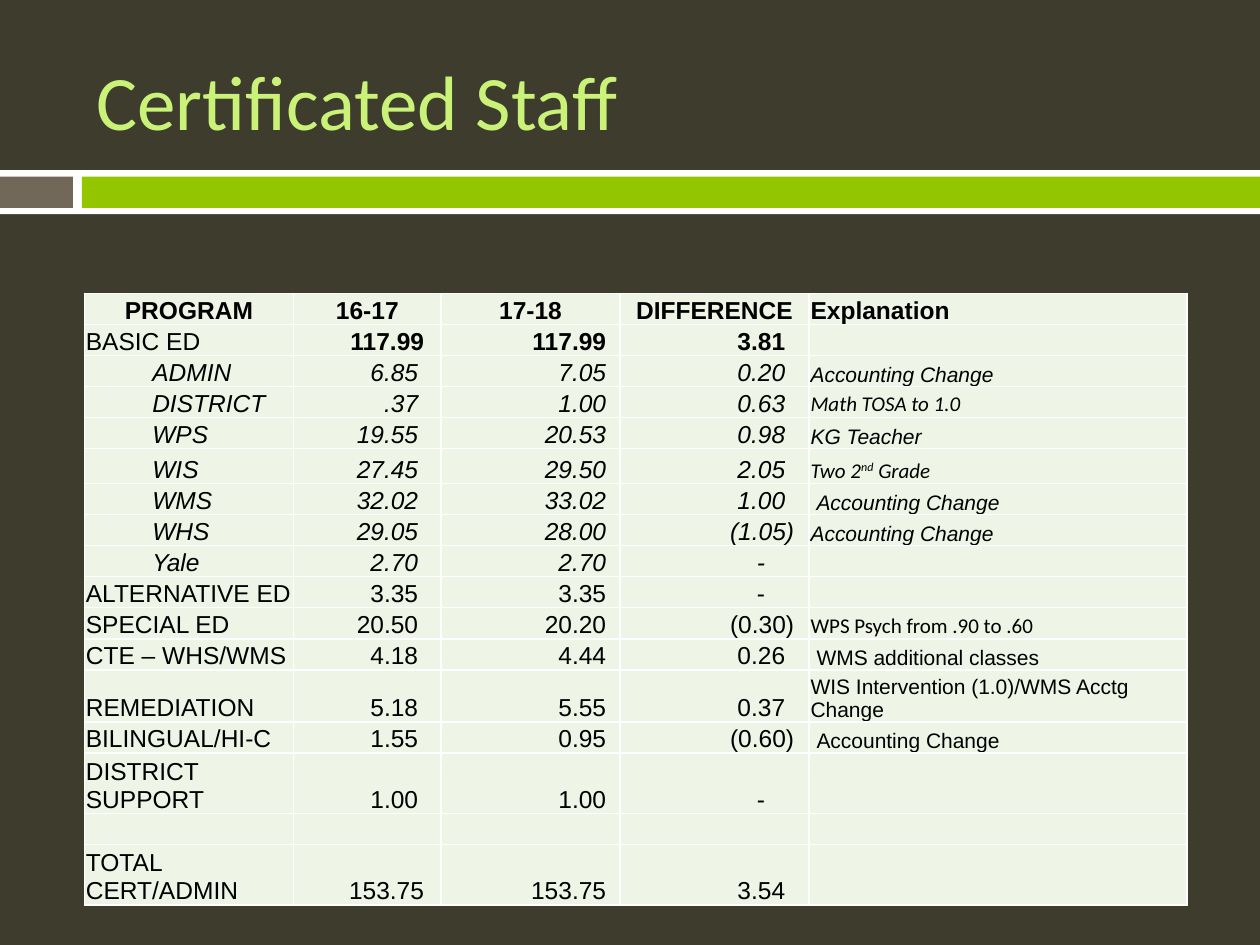
from lxml import etree
from pptx import Presentation
from pptx.dml.color import RGBColor
from pptx.enum import shapes, text
from pptx.oxml import ns
from pptx.util import Cm, Pt

LEFT, CENTER, RIGHT = text.PP_ALIGN.LEFT, text.PP_ALIGN.CENTER, text.PP_ALIGN.RIGHT
HEADINGS = ["PROGRAM", "16-17", "17-18", "DIFFERENCE", "Explanation"]
COLUMN_WIDTHS = [4.22, 2.97, 3.61, 3.81, 7.62]
ROW_HEIGHT = 0.61
TALL_ROWS = {"WIS": 0.71, "SPECIAL ED": 0.64}
SCHOOLS = {"ADMIN", "DISTRICT", "WPS", "WIS", "WMS", "WHS", "Yale"}
CALIBRI_NOTES = {"DISTRICT", "WIS", "SPECIAL ED"}
INDENTED_NOTES = {"WMS", "CTE – WHS/WMS", "BILINGUAL/HI-C"}

# Program, 16-17, 17-18, difference, explanation (^ marks superscript)
STAFF = [
    ("BASIC ED", "117.99", "117.99", "3.81", ""),
    ("ADMIN", "6.85", "7.05", "0.20", "Accounting Change"),
    ("DISTRICT", ".37", "1.00", "0.63", "Math TOSA to 1.0"),
    ("WPS", "19.55", "20.53", "0.98", "KG Teacher"),
    ("WIS", "27.45", "29.50", "2.05", "Two 2^nd^ Grade"),
    ("WMS", "32.02", "33.02", "1.00", "Accounting Change"),
    ("WHS", "29.05", "28.00", "(1.05)", "Accounting Change"),
    ("Yale", "2.70", "2.70", "-", ""),
    ("ALTERNATIVE ED", "3.35", "3.35", "-", ""),
    ("SPECIAL ED", "20.50", "20.20", "(0.30)", "WPS Psych from .90 to .60"),
    ("CTE – WHS/WMS", "4.18", "4.44", "0.26", "WMS additional classes"),
    ("REMEDIATION", "5.18", "5.55", "0.37", "WIS Intervention (1.0)/WMS Acctg Change"),
    ("BILINGUAL/HI-C", "1.55", "0.95", "(0.60)", "Accounting Change"),
    ("DISTRICT SUPPORT", "1.00", "1.00", "-", ""),
    ("", "", "", "", ""),
    ("TOTAL CERT/ADMIN", "153.75", "153.75", "3.54", ""),
]


def color(value):
    return RGBColor.from_string(value)


def write(frame, words, size=14, font="Arial", ink="000000", bold=False,
          italic=False, align=LEFT):
    """Write one paragraph; every second part between ^ marks is raised."""
    paragraph = frame.paragraphs[0]
    paragraph.alignment = align
    if not words:
        # An empty paragraph still sets the height of its row
        etree.SubElement(paragraph._p, ns.qn("a:endParaRPr"), sz=str(size * 100))
        return
    for index, part in enumerate(words.split("^")):
        run = paragraph.add_run()
        run.text = part
        run.font.size, run.font.name = Pt(size), font
        run.font.bold, run.font.italic = bold, italic
        run.font.color.rgb = color(ink)
        if index % 2:
            run._r.get_or_add_rPr().set("baseline", "30000")


def add_title(slide, left, top, width, height):
    title = slide.shapes.add_textbox(Cm(left), Cm(top), Cm(width), Cm(height))
    title.text_frame.word_wrap = True
    title.text_frame.vertical_anchor = text.MSO_ANCHOR.MIDDLE
    write(title.text_frame, "Certificated Staff", size=44, font="Calibri", ink="CAF278")


def add_band(slide, left, top, width, height):
    edge, tab, bar_start = 0.13, 1.47, 1.65
    pieces = [
        (0, 0, width, height, "FFFFFF"),
        (0, edge, tab, height - 2 * edge, "71685A"),
        (bar_start, edge, width - bar_start, height - 2 * edge, "94C600"),
    ]
    for x, y, w, h, fill in pieces:
        piece = slide.shapes.add_shape(shapes.MSO_SHAPE.RECTANGLE,
                                       Cm(left + x), Cm(top + y), Cm(w), Cm(h))
        piece.shadow.inherit = False
        piece.fill.solid()
        piece.fill.fore_color.rgb = color(fill)
        piece.line.fill.background()


def style_cell(cell):
    cell.vertical_anchor = text.MSO_ANCHOR.BOTTOM
    cell.margin_left = cell.margin_right = cell.margin_top = Cm(0.03)
    cell.margin_bottom = 0
    properties = cell._tc.get_or_add_tcPr()
    for side in ("lnL", "lnR", "lnT", "lnB"):
        border = etree.SubElement(properties, ns.qn(f"a:{side}"), w=str(Pt(1)))
        fill = etree.SubElement(border, ns.qn("a:solidFill"))
        etree.SubElement(fill, ns.qn("a:srgbClr"), val="FFFFFF")
    cell.fill.solid()
    cell.fill.fore_color.rgb = color("EEF5E7")


def difference_margin(value):
    """Line up digits, with closing brackets and dashes around them."""
    if value == "-":
        return 0.89
    return 0.3 if value.endswith(")") else 0.48


def fill_staff_row(cells, record):
    program, before, after, difference, note = record
    school = program in SCHOOLS
    if school:
        cells[0].margin_left = Cm(1.37)
    write(cells[0].text_frame, program, italic=school)

    margins = (0.46, 0.28, difference_margin(difference))
    if len(before) > 5:
        margins = (0.34, 0.28, margins[2])
    for cell, value, margin in zip(cells[1:4], (before, after, difference), margins):
        cell.margin_right = Cm(margin)
        write(cell.text_frame, value, italic=school, bold=program == "BASIC ED", align=RIGHT)

    if program in INDENTED_NOTES:
        cells[4].margin_left = Cm(0.15)
    write(cells[4].text_frame, note, size=12, italic=school,
          font="Calibri" if program in CALIBRI_NOTES else "Arial")


def add_staff_table(slide, left, top):
    row_count = len(STAFF) + 1
    table = slide.shapes.add_table(
        row_count, len(HEADINGS), Cm(left), Cm(top),
        Cm(sum(COLUMN_WIDTHS)), Cm(ROW_HEIGHT * row_count)).table
    table.first_row = table.horz_banding = False
    for column, width in zip(table.columns, COLUMN_WIDTHS):
        column.width = Cm(width)
    for cell in table.iter_cells():
        style_cell(cell)

    # Heading row
    table.rows[0].height = Cm(ROW_HEIGHT)
    for cell, heading in zip(table.rows[0].cells, HEADINGS):
        write(cell.text_frame, heading, bold=True,
              align=LEFT if heading == "Explanation" else CENTER)

    # One row for each program
    for index, record in enumerate(STAFF, start=1):
        row = table.rows[index]
        row.height = Cm(TALL_ROWS.get(record[0], ROW_HEIGHT))
        fill_staff_row(list(row.cells), record)


def main():
    deck = Presentation()
    deck.slide_width, deck.slide_height = Cm(25.4), Cm(19.05)
    slide = deck.slides.add_slide(deck.slide_layouts[6])
    slide.background.fill.solid()
    slide.background.fill.fore_color.rgb = color("3E3D2D")
    add_band(slide, 0, 3.43, 25.4, 0.89)
    add_title(slide, 1.7, 0.64, 22.65, 2.74)
    add_staff_table(slide, 1.7, 5.92)
    deck.save("out.pptx")


if __name__ == "__main__":
    main()
